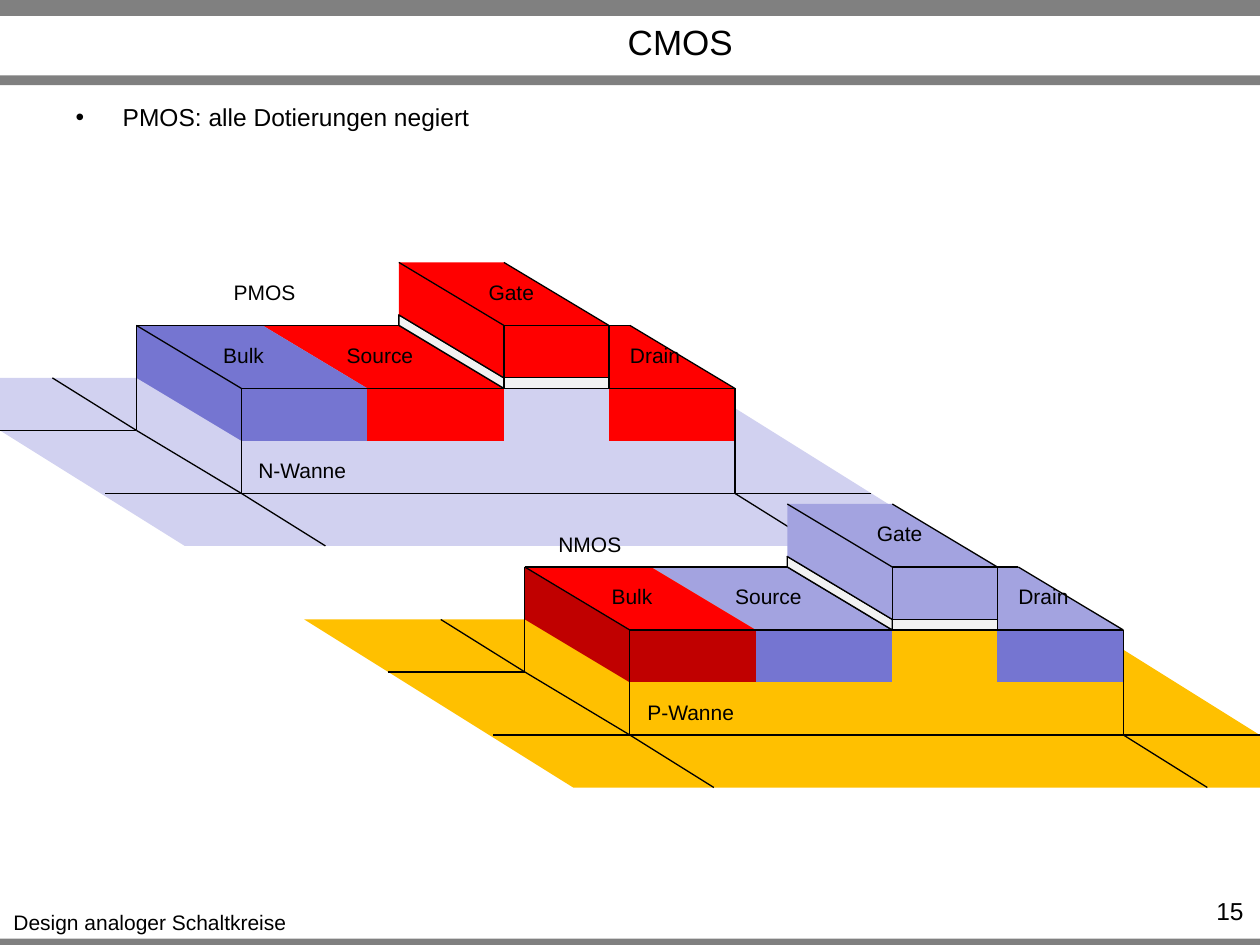
from dataclasses import dataclass

from lxml.etree import SubElement
from pptx import Presentation
from pptx.dml.color import RGBColor
from pptx.enum.shapes import MSO_CONNECTOR, MSO_SHAPE
from pptx.enum.text import MSO_ANCHOR, MSO_AUTO_SIZE, PP_ALIGN
from pptx.oxml.ns import qn
from pptx.util import Cm, Pt

GRID = Cm(2.54) / 12  # step of the oblique drawing grid
SKEW_X, SKEW_Y = 10, 6  # grid steps from a back edge to its front edge
BLACK, GREY, OXIDE, OXIDE_SHADE = "000000", "808080", "F2F2F2", "B3B3B3"


@dataclass
class Device:
    """Wording and colours of one transistor."""
    name: str
    name_at: tuple
    well_name: str
    well: str
    bulk_top: str
    bulk_front: str
    diffusion_top: str
    diffusion_front: str
    gate: str
    well_top: bool


PMOS = Device("PMOS", (12.2, -5), "N-Wanne", "D1D1F0", "7575D1", "7575D1",
              "FF0000", "FF0000", "FF0000", False)
NMOS = Device("NMOS", (6.2, -4), "P-Wanne", "FFC000", "FF0000", "C00000",
              "A3A3E0", "7575D1", "A3A3E0", True)


def color(hex_string):
    return RGBColor.from_string(hex_string)


def paint(shape, fill, outlined=False):
    shape.shadow.inherit = False
    shape.fill.solid()
    shape.fill.fore_color.rgb = color(fill)
    if outlined:
        shape.line.color.rgb = color(BLACK)
        shape.line.width = Pt(0.75)
    else:
        shape.line.fill.background()


def style_text(frame, size, align):
    paragraph = frame.paragraphs[0]
    paragraph.alignment = align
    for run in paragraph.runs:
        run.font.name = "Arial"
        run.font.size = Pt(size)
        run.font.color.rgb = color(BLACK)


def text(slide, wording, box, size, align, wrap=False):
    frame = slide.shapes.add_textbox(*box).text_frame
    frame.word_wrap = wrap
    frame.text = wording
    style_text(frame, size, align)


class Block:
    """Drawing area whose origin is the back left top corner of a transistor."""

    def __init__(self, slide, left, top):
        self.slide, self.left, self.top = slide, left, top

    def point(self, x, y):
        return round(self.left + x * GRID), round(self.top + y * GRID)

    def box(self, x, y, width, height):
        return *self.point(x, y), round(width * GRID), round(height * GRID)

    def front(self, x, y, width, height, fill, outlined=False,
              kind=MSO_SHAPE.FLOWCHART_PROCESS):
        face = self.slide.shapes.add_shape(kind, *self.box(x, y, width, height))
        paint(face, fill, outlined)

    def slab(self, x, y, width, height, fill, outlined=False, skew=SKEW_X):
        face = self.slide.shapes.add_shape(
            MSO_SHAPE.PARALLELOGRAM, *self.box(x, y, width, height))
        face.adjustments[0] = skew / height
        face.element.spPr.find(qn("a:xfrm")).set("flipH", "1")
        paint(face, fill, outlined)

    def side(self, x, y, height, fill):
        corners = [(x, y), (x + SKEW_X, y + SKEW_Y),
                   (x + SKEW_X, y + SKEW_Y + height), (x, y + height)]
        start, *others = [self.point(*corner) for corner in corners]
        outline = self.slide.shapes.build_freeform(*start, scale=1.0)
        outline.add_line_segments(others, close=True)
        paint(outline.convert_to_shape(), fill)

    def edges(self, *ends):
        for x1, y1, x2, y2 in ends:
            edge = self.slide.shapes.add_connector(
                MSO_CONNECTOR.STRAIGHT, *self.point(x1, y1), *self.point(x2, y2))
            edge.line.color.rgb = color(BLACK)
            edge.line.width = Pt(0.75)
            SubElement(edge.element.spPr, qn("a:effectLst"))

    def label(self, wording, center, y, width):
        text(self.slide, wording, self.box(center - width / 2, y, width, 3.6),
             12, PP_ALIGN.CENTER)


def draw_well(block, device):
    if device.well_top:
        block.slab(0, 0, 57, SKEW_Y, device.well)
    block.side(0, 0, 5, device.well)
    block.slab(-21, 5, 99, 16, device.well, skew=25.6)


def draw_implants(block, device):
    # Drain and source
    for x, width in ((35, 12), (12, 13)):
        block.slab(x, 0, width + SKEW_X, SKEW_Y, device.diffusion_top)
        block.front(x + SKEW_X, SKEW_Y, width, 5, device.diffusion_front)
    # Bulk
    block.slab(0, 0, 12 + SKEW_X, SKEW_Y, device.bulk_top)
    block.front(SKEW_X, SKEW_Y, 12, 5, device.bulk_front)
    block.side(0, 0, 5, device.bulk_front)


def draw_edges(block):
    block.edges(
        # Block
        (0, 0, 0, 10), (10, 6, 10, 16), (57, 6, 57, 16), (0, 0, 47, 0),
        (10, 6, 57, 6), (57, 6, 47, 0), (0, 10, 10, 16), (10, 16, 57, 16),
        # Ground lines leading away from the block
        (-8, 5, 0, 10), (10, 16, 18, 21), (57, 16, 65, 21),
        (10, 16, -3, 16), (0, 10, -13, 10), (70, 16, 57, 16))


def draw_gate(block, device):
    # Oxide
    block.slab(25, -1, 20, SKEW_Y, OXIDE_SHADE, outlined=True)
    block.edges((45, 5, 45, 6), (35, 5, 35, 6), (25, -1, 25, 0), (25, 0, 35, 6))
    oxide_side = block.slide.shapes.add_shape(
        MSO_SHAPE.PARALLELOGRAM, *block.box(26.5, -2.5, 7, SKEW_X))
    oxide_side.adjustments[0] = SKEW_Y / 7
    oxide_side.rotation = 90
    paint(oxide_side, OXIDE, outlined=True)
    block.edges((0, 0, 10, 6))
    # Electrode
    block.side(25, -6, 5, device.gate)
    block.slab(25, -6, 20, SKEW_Y, device.gate)
    block.edges((35, 0, 35, 5))
    block.front(35, 0, 10, 5, device.gate, True, MSO_SHAPE.RECTANGLE)
    block.edges((35, 5, 25, -1), (35, 0, 25, -6), (45, 0, 35, -6))
    block.front(35, 5, 10, 1, OXIDE, outlined=True)


def draw_labels(block, device):
    block.label(device.well_name, 15.8, 12, 10.8)
    for wording, center, y, width in (("Bulk", 10.2, 1, 6.4), ("Source", 23.2, 1, 8.8),
                                      ("Drain", 49.4, 1, 7.2), ("Gate", 35.7, -5, 6.8)):
        block.label(wording, center, y, width)
    block.label(device.name, *device.name_at, 8.4)


def draw_transistor(slide, left, top, device):
    block = Block(slide, left, top)
    draw_well(block, device)
    draw_implants(block, device)
    draw_edges(block)
    draw_gate(block, device)
    draw_labels(block, device)


def draw_frame(slide, width):
    for top, height in ((18.92, 0.2), (0, 0.32), (1.52, 0.2)):
        bar = slide.shapes.add_shape(
            MSO_SHAPE.RECTANGLE, 0, Cm(top), width, Cm(height))
        paint(bar, GREY)
    text(slide, "Design analoger Schaltkreise",
         (0, Cm(18.21), Cm(6.05), Cm(0.76)), 12, PP_ALIGN.CENTER)
    text(slide, "15", (Cm(23.11), Cm(17.93), Cm(2.21), Cm(0.61)),
         14, PP_ALIGN.RIGHT, wrap=True)


def fill_placeholder(holder, box, wording, size, align, anchor):
    holder.left, holder.top, holder.width, holder.height = box
    frame = holder.text_frame
    frame.text = wording
    frame.auto_size = MSO_AUTO_SIZE.NONE
    frame.vertical_anchor = anchor
    frame.paragraphs[0].space_before = Pt(0)
    style_text(frame, size, align)


def write_heading(slide):
    title, body = slide.placeholders
    fill_placeholder(title, (Cm(3.3), Cm(0.36), Cm(20.83), Cm(0.97)),
                     "CMOS", 20, PP_ALIGN.CENTER, MSO_ANCHOR.MIDDLE)
    fill_placeholder(body, (Cm(1.27), Cm(1.93), Cm(22.86), Cm(1.24)),
                     "PMOS: alle Dotierungen negiert", 14, PP_ALIGN.LEFT, MSO_ANCHOR.TOP)
    # Bullet with a hanging indent
    properties = body.text_frame.paragraphs[0]._p.get_or_add_pPr()
    properties.set("marL", str(Cm(0.95)))
    properties.set("indent", str(-Cm(0.95)))
    SubElement(properties, qn("a:buChar")).set("char", "•")


def main():
    deck = Presentation()
    deck.slide_width, deck.slide_height = Cm(25.4), Cm(19.05)
    slide = deck.slides.add_slide(deck.slide_layouts[1])
    draw_frame(slide, deck.slide_width)
    write_heading(slide)
    draw_transistor(slide, Cm(2.75), Cm(6.56), PMOS)
    draw_transistor(slide, Cm(10.58), Cm(11.43), NMOS)
    deck.save("out.pptx")


if __name__ == "__main__":
    main()
